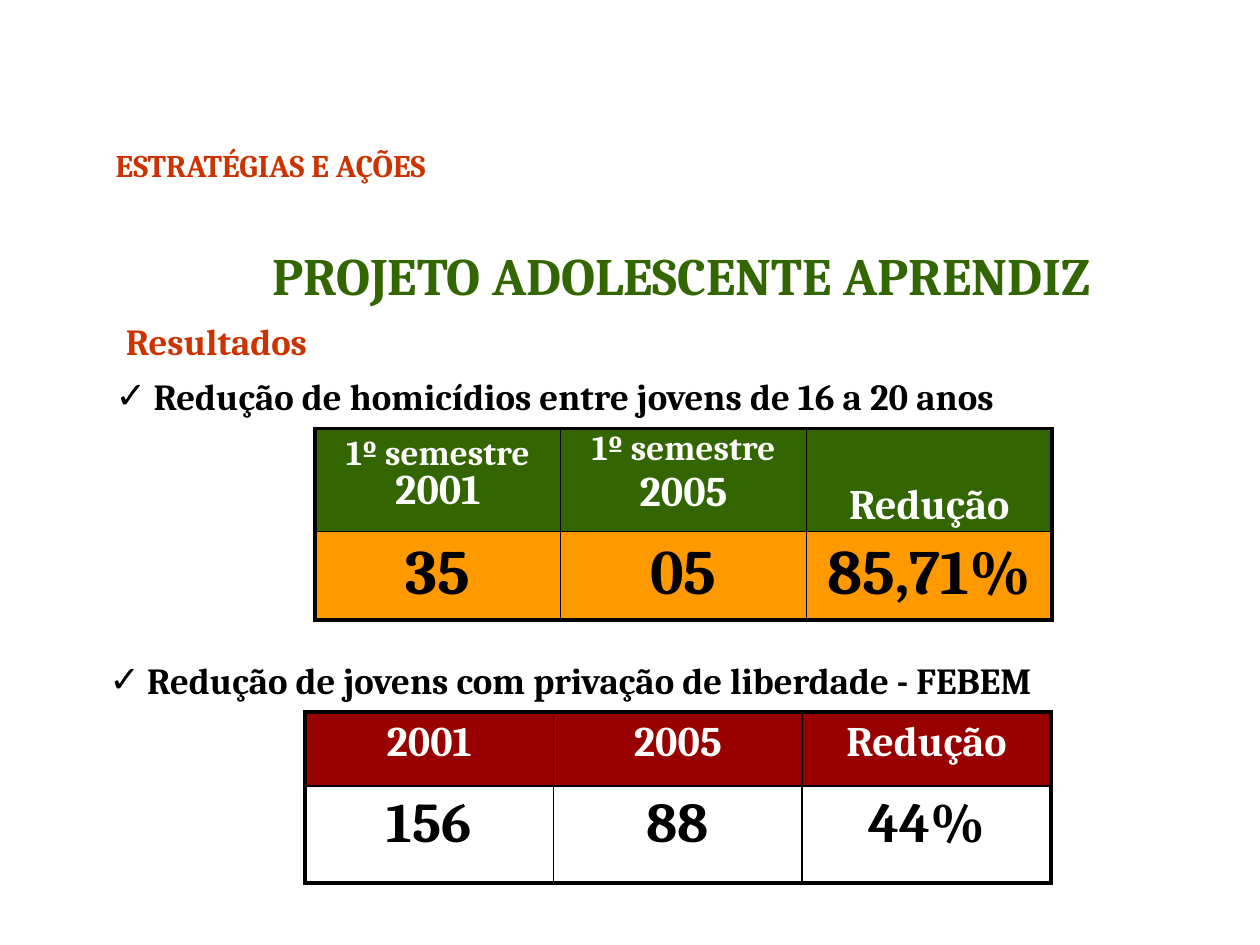
from dataclasses import dataclass

from lxml.etree import SubElement
from pptx import Presentation
from pptx.dml.color import RGBColor
from pptx.enum.text import MSO_ANCHOR, PP_ALIGN
from pptx.oxml.ns import qn
from pptx.util import Inches, Pt

COLORS = {
    "red": "CC3300", "green": "336600", "orange": "FF9900",
    "wine": "990000", "white": "FFFFFF", "black": "000000",
}


@dataclass
class Line:
    text: str
    size: float
    color: str
    space: float = 1.0
    before: float = 0
    center: bool = False
    bullet: bool = False
    indent: float = 0


@dataclass
class Cell:
    paras: list  # each paragraph is a list of (text, size) runs
    space: float = 1.0
    anchor: MSO_ANCHOR = MSO_ANCHOR.TOP


@dataclass
class Row:
    height: float
    fill: str
    color: str
    cells: list


@dataclass
class Grid:
    left: float
    top: float
    width: float
    rows: list


def rgb(name: str) -> RGBColor:
    return RGBColor.from_string(COLORS[name])


def style(para, color: str) -> None:
    para.font.name = "Cambria"
    para.font.bold = True
    para.font.color.rgb = rgb(color)


def add_check(para) -> None:
    props = para._p.get_or_add_pPr()
    props.set("marL", str(Inches(0.3)))
    props.set("indent", str(-Inches(0.3)))
    SubElement(props, qn("a:buFont"), typeface="Arial")
    SubElement(props, qn("a:buChar"), char="✓")


def add_text(slide, box: tuple, lines: list) -> None:
    frame = slide.shapes.add_textbox(*map(Inches, box)).text_frame
    frame.word_wrap = True
    for i, line in enumerate(lines):
        para = frame.add_paragraph() if i else frame.paragraphs[0]
        para.text = line.text
        para.line_spacing = line.space
        if line.before:
            para.space_before = Pt(line.before)
        if line.center:
            para.alignment = PP_ALIGN.CENTER
        if line.bullet:
            add_check(para)
        elif line.indent:
            para._p.get_or_add_pPr().set("marL", str(Inches(line.indent)))
        style(para, line.color)
        para.font.size = Pt(line.size)


def add_edges(cell, outer: dict) -> None:
    props = cell._tc.get_or_add_tcPr()
    for side, thick in outer.items():
        width = Pt(2.25 if thick else 1)
        edge = SubElement(props, qn(f"a:ln{side}"), w=str(width))
        fill = SubElement(edge, qn("a:solidFill"))
        SubElement(fill, qn("a:srgbClr"), val=COLORS["black"])


def fill_cell(cell, data: Cell, row: Row) -> None:
    cell.fill.solid()
    cell.fill.fore_color.rgb = rgb(row.fill)
    cell.vertical_anchor = data.anchor
    frame = cell.text_frame
    for i, runs in enumerate(data.paras):
        para = frame.add_paragraph() if i else frame.paragraphs[0]
        para.alignment = PP_ALIGN.CENTER
        para.line_spacing = data.space
        if i:
            para.space_before = Pt(5)
        style(para, row.color)
        for text, size in runs:
            run = para.add_run()
            run.text = text
            run.font.size = Pt(size)


def add_grid(slide, grid: Grid) -> None:
    high, wide = len(grid.rows), len(grid.rows[0].cells)
    total = sum(row.height for row in grid.rows)
    table = slide.shapes.add_table(
        high, wide, Inches(grid.left), Inches(grid.top),
        Inches(grid.width), Inches(total)).table
    table.first_row = table.horz_banding = False
    for r, row in enumerate(grid.rows):
        table.rows[r].height = Inches(row.height)
        for c, data in enumerate(row.cells):
            cell = table.cell(r, c)
            add_edges(cell, {"L": c == 0, "R": c == wide - 1,
                             "T": r == 0, "B": r == high - 1})
            fill_cell(cell, data, row)


def plain(size: float, *texts: str) -> list:
    return [Cell([[(text, size)]]) for text in texts]


HEADS = [
    Line("ESTRATÉGIAS E AÇÕES", 18, "red"),
    Line("PROJETO ADOLESCENTE APRENDIZ", 30, "green", 1.3, 23, center=True),
    Line("Resultados", 21, "red", 1.3, indent=0.08),
    Line("Redução de homicídios entre jovens de 16 a 20 anos", 21, "black",
         1.25, bullet=True),
]
JAIL = [Line("Redução de jovens com privação de liberdade - FEBEM", 21,
             "black", bullet=True)]

DEATHS = Grid(2.5, 3.4, 5.85, [
    Row(0.82, "green", "white", [
        Cell([[("1º semestre", 20), (" 2001", 24)]], 0.8),
        Cell([[("1º semestre", 20)], [("2005", 24)]], 0.8),
        Cell([[("Redução", 24)]], 0.65, MSO_ANCHOR.BOTTOM),
    ]),
    Row(0.7, "orange", "black", plain(36, "35", "05", "85,71%")),
])
INMATES = Grid(2.42, 5.65, 5.92, [
    Row(0.59, "wine", "white", plain(24, "2001", "2005", "Redução")),
    Row(0.77, "white", "black", plain(32, "156", "88", "44%")),
])


def main() -> None:
    deck = Presentation()
    deck.slide_width, deck.slide_height = Inches(10), Inches(7.5)
    slide = deck.slides.add_slide(deck.slide_layouts[6])
    # Headings and homicide results
    add_text(slide, (0.82, 1.11, 9.18, 3.3), HEADS)
    add_grid(slide, DEATHS)
    # Young people in custody
    add_text(slide, (0.77, 5.17, 8.95, 1.5), JAIL)
    add_grid(slide, INMATES)
    deck.save("out.pptx")


if __name__ == "__main__":
    main()
